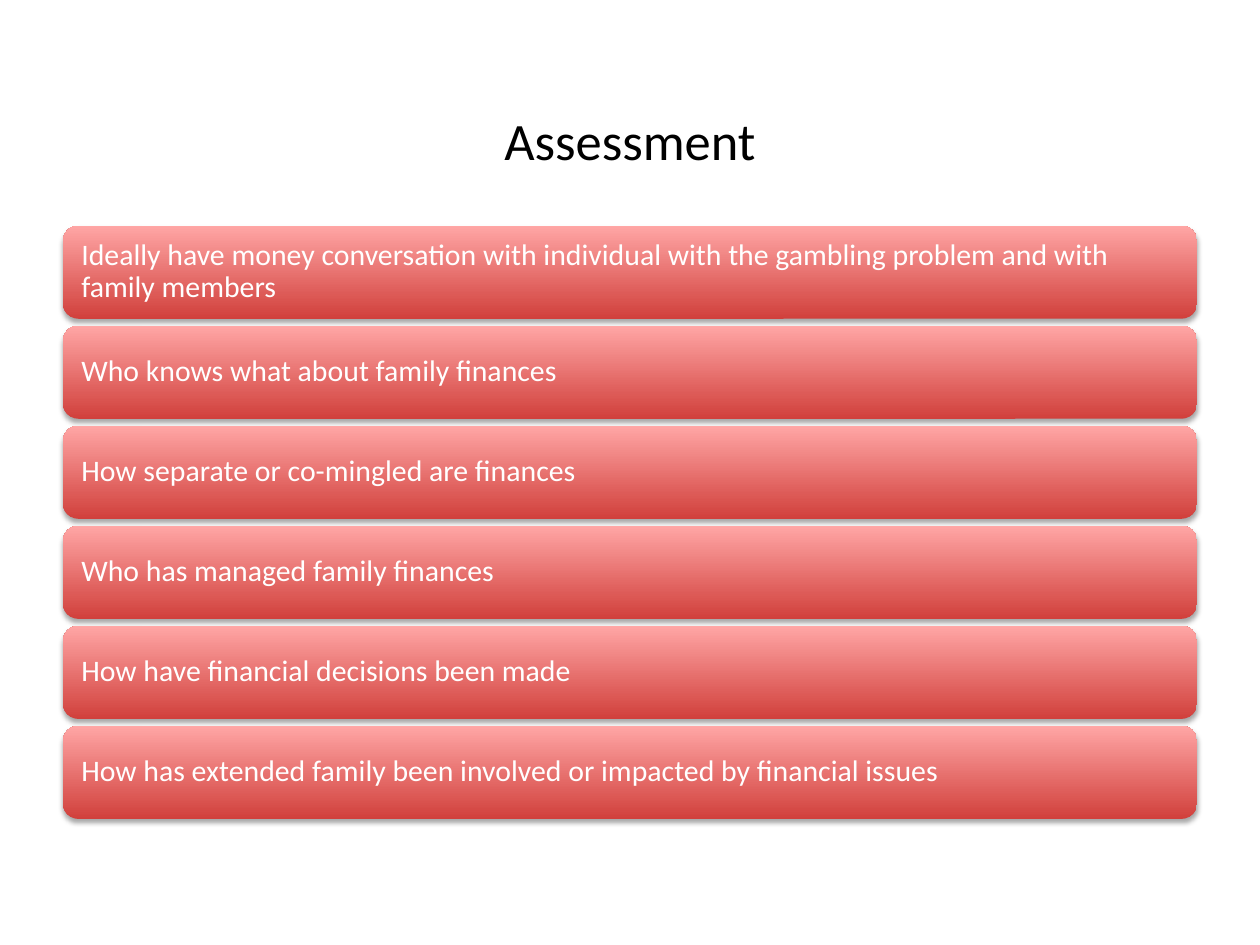
import lxml.etree
import pptx
import pptx.dml.color
import pptx.enum.shapes
import pptx.enum.text
import pptx.oxml.ns
import pptx.util

Inches = pptx.util.Inches
Pt = pptx.util.Pt
ALIGN = pptx.enum.text.PP_ALIGN
MIDDLE = pptx.enum.text.MSO_ANCHOR.MIDDLE

TOPICS = [
    "Ideally have money conversation with individual with the gambling problem and with family members",
    "Who knows what about family finances",
    "How separate or co-mingled are finances",
    "Who has managed family finances",
    "How have financial decisions been made",
    "How has extended family been involved or impacted by financial issues",
]


def color(code):
    return pptx.dml.color.RGBColor.from_string(code)


def write(frame, text, size, code, align):
    frame.text = text
    frame.word_wrap = True
    frame.vertical_anchor = MIDDLE
    para = frame.paragraphs[0]
    para.alignment = align
    font = para.runs[0].font
    font.name = "Calibri"
    font.size = Pt(size)
    font.color.rgb = color(code)
    return para


def add_shadow(shape):
    """Cast a soft black shadow straight down."""
    shape.shadow.inherit = False
    qn = pptx.oxml.ns.qn
    effects = shape.element.spPr.find(qn("a:effectLst"))
    outer = lxml.etree.SubElement(
        effects, qn("a:outerShdw"), blurRad=str(Pt(3.1)), dist=str(Pt(1.8)),
        dir="5400000", rotWithShape="0")
    black = lxml.etree.SubElement(outer, qn("a:srgbClr"), val="000000")
    lxml.etree.SubElement(black, qn("a:alpha"), val="35000")


def add_title(slide, text, left, top, width, height):
    title = slide.shapes.title
    title.left, title.top = Inches(left), Inches(top)
    title.width, title.height = Inches(width), Inches(height)
    write(title.text_frame, text, 30, "000000", ALIGN.CENTER)


def add_bar(shapes, text, left, top, width, height):
    bar = shapes.add_shape(
        pptx.enum.shapes.MSO_SHAPE.ROUNDED_RECTANGLE,
        Inches(left), Inches(top), Inches(width), Inches(height))
    bar.fill.gradient()
    bar.fill.gradient_angle = 90
    for stop, place, code in zip(bar.fill.gradient_stops, (0, 1), ("D1403C", "FFA6A5")):
        stop.position = place
        stop.color.rgb = color(code)
    bar.line.fill.background()
    add_shadow(bar)
    frame = bar.text_frame
    frame.margin_left = frame.margin_right = Inches(0.11)
    frame.margin_top = frame.margin_bottom = Inches(0.11)
    para = write(frame, text, 17, "FFFFFF", ALIGN.LEFT)
    para.line_spacing = 0.9


def add_list(slide, topics, left, top, width, height):
    """Stack one bar per topic with equal gaps to fill the box."""
    shapes = slide.shapes.add_group_shape().shapes
    bar = 0.74
    pitch = (height - bar) / (len(topics) - 1)
    for row, topic in enumerate(topics):
        add_bar(shapes, topic, left, top + row * pitch, width, bar)


def main():
    deck = pptx.Presentation()
    deck.slide_width, deck.slide_height = Inches(10), Inches(7.5)
    slide = deck.slides.add_slide(deck.slide_layouts[5])
    add_title(slide, "Assessment", 0.5, 0.67, 9, 0.88)
    add_list(slide, TOPICS, 0.5, 1.79, 9, 4.71)
    deck.save("out.pptx")


if __name__ == "__main__":
    main()
